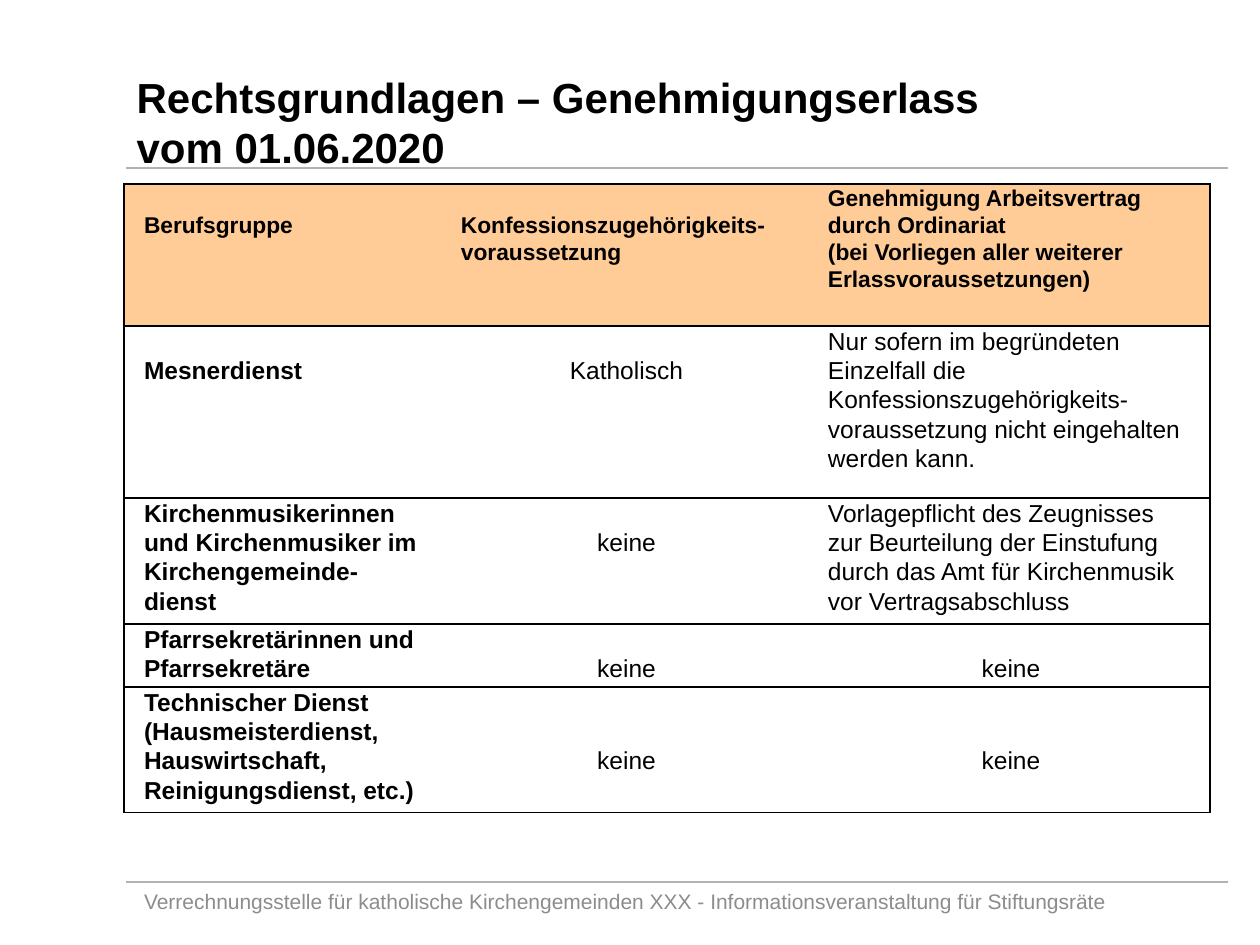
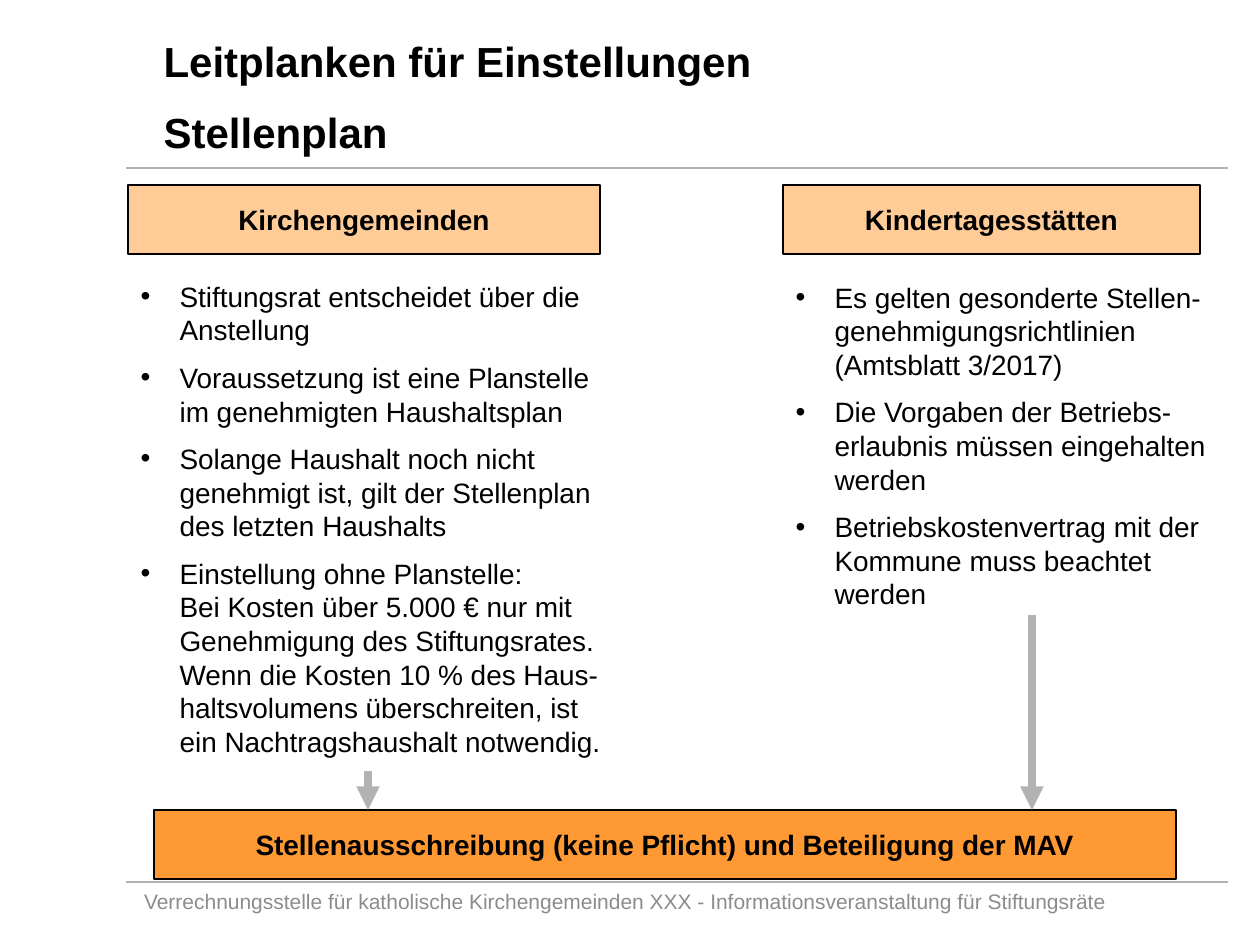
"""Build two slides on approval rules and hiring guidelines for parishes."""
from lxml.etree import SubElement
from pptx import Presentation
from pptx.dml.color import RGBColor
from pptx.enum.shapes import MSO_CONNECTOR, MSO_SHAPE
from pptx.enum.text import MSO_ANCHOR as Anchor, MSO_AUTO_SIZE as AutoSize, PP_ALIGN as Align
from pptx.oxml import parse_xml
from pptx.oxml.ns import nsdecls, qn
from pptx.util import Emu, Pt

BLACK = RGBColor(0x00, 0x00, 0x00)
RULE_GRAY = RGBColor(0xB2, 0xB2, 0xB2)
FOOTER_GRAY = RGBColor(0x8C, 0x8C, 0x8C)
PEACH = RGBColor(0xFF, 0xCC, 0x97)
ORANGE = RGBColor(0xFF, 0x99, 0x34)
FONT = "Arial"
EMU_PER_PX = 914400 / 126
TITLE_ONLY, TWO_CONTENT = 5, 3
FOOTER = ("Verrechnungsstelle für katholische Kirchengemeinden XXX - "
          "Informationsveranstaltung für Stiftungsräte")


def px(length):
    return Emu(round(length * EMU_PER_PX))


def write_text(frame, *texts, size=16, bold=False, color=BLACK, align=Align.LEFT,
               spacing=1.0, gap=0, bullet_indent=0):
    frame.word_wrap = True
    for index, text in enumerate(texts):
        paragraph = frame.add_paragraph() if index else frame.paragraphs[0]
        paragraph.text = text
        if bullet_indent:
            properties = paragraph._p.get_or_add_pPr()
            properties.set("marL", str(px(bullet_indent)))
            properties.set("indent", str(-px(bullet_indent)))
            SubElement(properties, qn("a:buChar")).set("char", "•")
        paragraph.alignment = align
        paragraph.line_spacing = spacing
        paragraph.space_before = Pt(gap if index else 0)
        for target in (paragraph, *paragraph.runs):
            target.font.name = FONT
            target.font.size = Pt(size)
            target.font.bold = bold
            target.font.color.rgb = color


def set_borders(cell, sides):
    properties = cell._tc.get_or_add_tcPr()
    for position, side in enumerate("LRTB"):
        paint = f'<a:solidFill><a:srgbClr val="{BLACK}"/></a:solidFill>' if side in sides else "<a:noFill/>"
        border = parse_xml(f'<a:ln{side} {nsdecls("a")} w="{Pt(0.75)}">{paint}</a:ln{side}>')
        properties.insert(position, border)


class Deck:
    """Hold the shared style and the current slide."""

    def __init__(self):
        self.presentation = Presentation()
        self.presentation.slide_width = px(1260)
        self.presentation.slide_height = px(945)
        self.slide = None

    def add_slide(self, layout, box, *title_lines):
        self.slide = self.presentation.slides.add_slide(self.presentation.slide_layouts[layout])
        for y in (882, 168):
            self.line((126, y), (1228, y))
        self.fill_placeholder(0, box, *title_lines, size=24, bold=True, gap=12)
        footer = self.slide.shapes.add_textbox(*map(px, (105, 876, 1041, 50)))
        footer.text_frame.vertical_anchor = Anchor.MIDDLE
        write_text(footer.text_frame, FOOTER, size=12, color=FOOTER_GRAY, align=Align.CENTER)

    def fill_placeholder(self, number, box, *texts, **style):
        shape = self.slide.placeholders[number]
        shape.left, shape.top, shape.width, shape.height = map(px, box)
        shape.text_frame.auto_size = AutoSize.NONE
        shape.text_frame.vertical_anchor = Anchor.TOP
        write_text(shape.text_frame, *texts, **style)

    def bullets(self, number, box, *texts):
        self.fill_placeholder(number, box, *texts, gap=8, bullet_indent=39)

    def line(self, start, end, width=0.75, arrow=False):
        connector = self.slide.shapes.add_connector(MSO_CONNECTOR.STRAIGHT, *map(px, start + end))
        connector.line.color.rgb = RULE_GRAY
        connector.line.width = Pt(width)
        if arrow:
            SubElement(connector.line._get_or_add_ln(), qn("a:tailEnd")).set("type", "triangle")
        SubElement(connector._element.spPr, qn("a:effectLst"))

    def label_box(self, box, text, fill):
        shape = self.slide.shapes.add_shape(MSO_SHAPE.RECTANGLE, *map(px, box))
        shape.shadow.inherit = False
        shape.fill.solid()
        shape.fill.fore_color.rgb = fill
        shape.line.color.rgb = BLACK
        shape.line.width = Pt(0.75)
        shape.text_frame.vertical_anchor = Anchor.MIDDLE
        write_text(shape.text_frame, text, bold=True, align=Align.CENTER)

    def table(self, left, top, widths, heights, rows):
        frame = self.slide.shapes.add_table(len(rows), len(widths),
                                            *map(px, (left, top, sum(widths), sum(heights))))
        table = frame.table
        table.first_row = table.horz_banding = False
        for column, width in zip(table.columns, widths):
            column.width = px(width)
        for row_index, (height, row) in enumerate(zip(heights, rows)):
            table.rows[row_index].height = px(height)
            for column_index, (text, lines_above) in enumerate(row):
                self.cell(table.cell(row_index, column_index), text, lines_above,
                          header=row_index == 0, first=column_index == 0,
                          last=column_index == len(widths) - 1)

    def cell(self, cell, text, lines_above, header, first, last):
        cell.margin_left, cell.margin_right = px(20), px(16 if not header else 6)
        cell.margin_top, cell.margin_bottom = px(lines_above * (27 if header else 29)), 0
        centered = lines_above and not (header or first)
        write_text(cell.text_frame, text, size=13 if header else 14, bold=header or first,
                   align=Align.CENTER if centered else Align.LEFT, spacing=1.07)
        if header:
            cell.fill.solid()
            cell.fill.fore_color.rgb = PEACH
        else:
            cell.fill.background()
        set_borders(cell, "TB" + "L" * first + "R" * last)


def add_approval_slide(deck):
    deck.add_slide(TITLE_ONLY, (124, 65, 883, 115),
                   "Rechtsgrundlagen – Genehmigungserlass vom 01.06.2020")
    deck.table(124, 184, (317, 367, 402), (142, 172, 126, 63, 125), [
        [("Berufsgruppe", 1),
         ("Konfessionszugehörigkeits- voraussetzung", 1),
         ("Genehmigung Arbeitsvertrag durch Ordinariat\n"
          "(bei Vorliegen aller weiterer Erlassvoraussetzungen)", 0)],
        [("Mesnerdienst", 1),
         ("Katholisch", 1),
         ("Nur sofern im begründeten Einzelfall die Konfessionszugehörigkeits-voraussetzung "
          "nicht eingehalten werden kann.", 0)],
        [("Kirchenmusikerinnen und Kirchenmusiker im Kirchengemeinde-dienst", 0),
         ("keine", 1),
         ("Vorlagepflicht des Zeugnisses zur Beurteilung der Einstufung durch das Amt "
          "für Kirchenmusik vor Vertragsabschluss", 0)],
        [("Pfarrsekretärinnen und Pfarrsekretäre", 0), ("keine", 1), ("keine", 1)],
        [("Technischer Dienst (Hausmeisterdienst, Hauswirtschaft, Reinigungsdienst, etc.)", 0),
         ("keine", 2), ("keine", 2)],
    ])


def add_staffing_slide(deck):
    deck.add_slide(TWO_CONTENT, (151, 29, 764, 140), "Leitplanken für Einstellungen", "Stellenplan")
    deck.label_box((128, 185, 472, 69), "Kirchengemeinden", PEACH)
    deck.label_box((783, 185, 417, 69), "Kindertagesstätten", PEACH)
    deck.bullets(1, (128, 273, 491, 671),
                 "Stiftungsrat entscheidet über die Anstellung",
                 "Voraussetzung ist eine Planstelle im genehmigten Haushaltsplan",
                 "Solange Haushalt noch nicht genehmigt ist, gilt der Stellenplan des letzten Haushalts",
                 "Einstellung ohne Planstelle:\nBei Kosten über 5.000 € nur mit Genehmigung des "
                 "Stiftungsrates. Wenn die Kosten 10 % des Haus-haltsvolumens überschreiten, "
                 "ist ein Nachtragshaushalt notwendig.")
    deck.bullets(2, (783, 274, 436, 352),
                 "Es gelten gesonderte Stellen-genehmigungsrichtlinien (Amtsblatt 3/2017)",
                 "Die Vorgaben der Betriebs-erlaubnis müssen eingehalten werden",
                 "Betriebskostenvertrag mit der Kommune muss beachtet werden")
    deck.label_box((154, 810, 1022, 69), "Stellenausschreibung (keine Pflicht) und Beteiligung der MAV", ORANGE)
    for x, top in ((368, 771), (1032, 615)):
        deck.line((x, top), (x, 810), width=4.5, arrow=True)


def main():
    deck = Deck()
    add_approval_slide(deck)
    add_staffing_slide(deck)
    deck.presentation.save("out.pptx")


if __name__ == "__main__":
    main()
